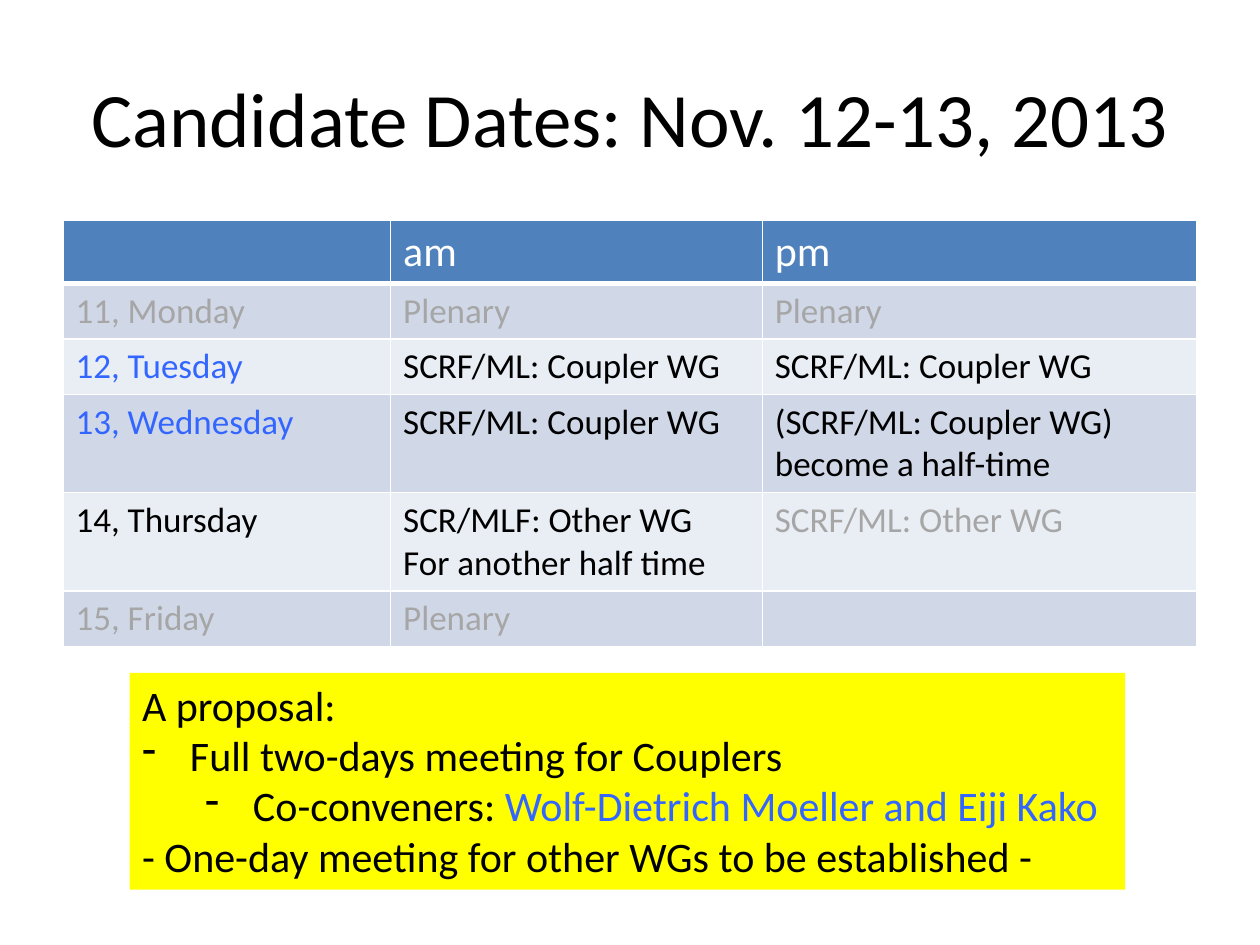
from dataclasses import dataclass

from lxml.etree import SubElement
from pptx import Presentation
from pptx.dml.color import RGBColor
from pptx.enum.text import MSO_ANCHOR, PP_ALIGN
from pptx.oxml.ns import qn
from pptx.util import Inches, Pt


@dataclass(frozen=True)
class Theme:
    font: str = "Calibri"
    title: int = 44
    lead: int = 24
    body: int = 20
    black: str = "000000"
    white: str = "FFFFFF"
    muted: str = "A6A6A6"
    accent: str = "3366FF"
    header: str = "4F81BD"
    bands: tuple = ("D0D8E8", "E9EDF4")
    note: str = "FFFF00"


THEME = Theme()
COLUMN_WIDTHS = (2.6, 2.95, 3.45)
ROW_HEIGHTS = (0.5, 0.44, 0.44, 0.78, 0.78, 0.44)
COUPLER = ("SCRF/ML: Coupler WG", THEME.black)
PLENARY = ("Plenary", THEME.muted)
EMPTY = ("", THEME.black)
SCHEDULE = (
    (EMPTY, ("am", THEME.white), ("pm", THEME.white)),
    (("11, Monday", THEME.muted), PLENARY, PLENARY),
    (("12, Tuesday", THEME.accent), COUPLER, COUPLER),
    (("13, Wednesday", THEME.accent), COUPLER,
     ("(SCRF/ML: Coupler WG) become a half-time", THEME.black)),
    (("14, Thursday", THEME.black),
     ("SCR/MLF: Other WG\nFor another half time", THEME.black),
     ("SCRF/ML: Other WG", THEME.muted)),
    (("15, Friday", THEME.muted), PLENARY, EMPTY),
)
# Each line: bullet level (None for plain text) and its coloured spans.
PROPOSAL = (
    (None, (("A proposal:", THEME.black),)),
    (0, (("Full two-days meeting for Couplers", THEME.black),)),
    (1, (("Co-conveners: ", THEME.black),
         ("Wolf-Dietrich Moeller and Eiji Kako", THEME.accent))),
    (None, (("- One-day meeting for other WGs to be established -", THEME.black),)),
)


def add_span(para, text, size, color):
    span = para.add_run()
    span.text = text
    values = {"name": THEME.font, "size": Pt(size), "bold": False}
    for name, value in values.items():
        setattr(span.font, name, value)
    span.font.color.rgb = RGBColor.from_string(color)


def paragraphs(frame, count):
    """Return count paragraphs, the first being the one the frame already has."""
    return [frame.paragraphs[0]] + [frame.add_paragraph() for _ in range(count - 1)]


def fill_solid(target, color):
    target.fill.solid()
    target.fill.fore_color.rgb = RGBColor.from_string(color)


def add_borders(cell, widths):
    """Draw white cell borders; widths maps a side (L, R, T, B) to points."""
    properties = cell._tc.get_or_add_tcPr()
    for side, width in widths.items():
        line = SubElement(properties, qn(f"a:ln{side}"), w=str(Pt(width)))
        SubElement(SubElement(line, qn("a:solidFill")), qn("a:srgbClr"), val=THEME.white)


def add_dash(para, level):
    indent = Inches(0.38)
    properties = para._p.get_or_add_pPr()
    properties.set("marL", str(indent + level * Inches(0.5)))
    properties.set("indent", str(-indent))
    SubElement(properties, qn("a:buFontTx"))
    SubElement(properties, qn("a:buChar"), char="-")
    para.level = level


def add_title(page, box):
    frame = page.shapes.add_textbox(*box).text_frame
    frame.word_wrap = True
    frame.vertical_anchor = MSO_ANCHOR.MIDDLE
    para = frame.paragraphs[0]
    para.alignment = PP_ALIGN.CENTER
    add_span(para, "Candidate Dates: Nov. 12-13, 2013", THEME.title, THEME.black)


def add_schedule(page, box):
    table = page.shapes.add_table(len(SCHEDULE), len(COLUMN_WIDTHS), *box).table
    for column, width in zip(table.columns, COLUMN_WIDTHS):
        column.width = Inches(width)
    for index, (row, height, entries) in enumerate(zip(table.rows, ROW_HEIGHTS, SCHEDULE)):
        row.height = Inches(height)
        is_header = index == 0
        size = THEME.lead if is_header else THEME.body
        color = THEME.header if is_header else THEME.bands[(index - 1) % 2]
        borders = {"L": 1, "R": 1, "T": 3 if index == 1 else 1, "B": 3 if is_header else 1}
        for cell, (text, text_color) in zip(row.cells, entries):
            add_borders(cell, borders)
            fill_solid(cell, color)
            lines = text.split("\n") if text else []
            for para, line in zip(paragraphs(cell.text_frame, len(lines)), lines):
                add_span(para, line, size, text_color)


def add_proposal(page, box):
    note = page.shapes.add_textbox(*box)
    fill_solid(note, THEME.note)
    frame = note.text_frame
    frame.word_wrap = True
    for para, (level, spans) in zip(paragraphs(frame, len(PROPOSAL)), PROPOSAL):
        if level is not None:
            add_dash(para, level)
        for text, color in spans:
            add_span(para, text, THEME.lead, color)


def main():
    deck = Presentation()
    deck.slide_width, deck.slide_height = Inches(10), Inches(7.5)
    page = deck.slides.add_slide(deck.slide_layouts[6])
    regions = (
        (add_title, (0.5, 0.3, 9, 1.25)),
        (add_schedule, (0.5, 1.75, 9, sum(ROW_HEIGHTS))),
        (add_proposal, (1.03, 5.34, 7.9, 1.72)),
    )
    for add_region, box in regions:
        add_region(page, [Inches(length) for length in box])
    deck.save("out.pptx")


if __name__ == "__main__":
    main()
